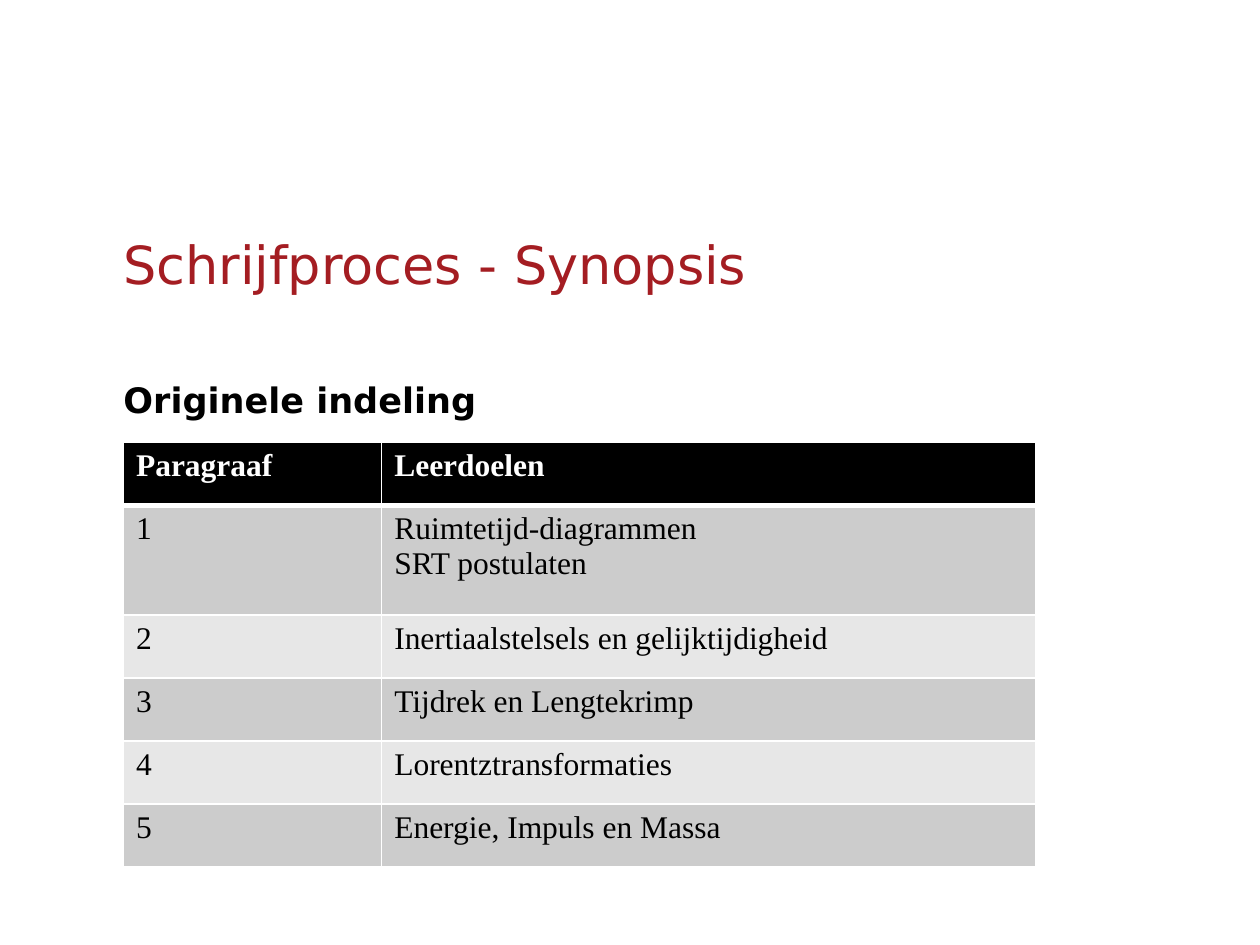
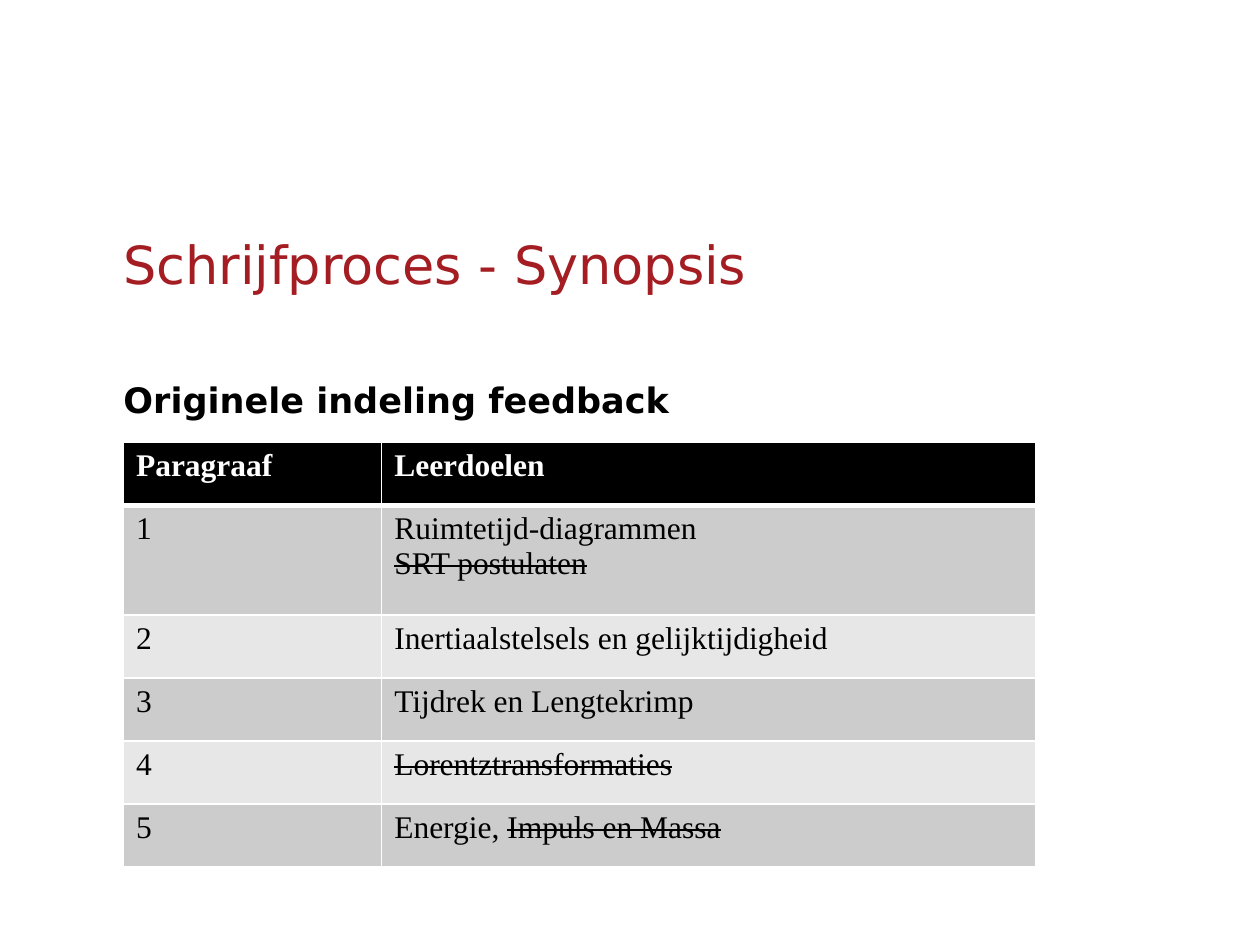
from lxml import etree
from pptx import Presentation
from pptx.dml.color import RGBColor
from pptx.enum import text
from pptx.oxml.ns import qn
from pptx.util import Inches, Pt

COLORS = {
    "title": "A41D22",
    "ink": "000000",
    "paper": "FFFFFF",
    "odd_row": "CCCCCC",
    "even_row": "E7E7E7",
}
SANS, SERIF = "DejaVu Sans", "Times New Roman"
LEFT, WIDTH = 0.98, 7.29

TITLE = "Schrijfproces - Synopsis"
HEADER = ("Paragraaf", "Leerdoelen")
COLUMN_WIDTHS = (2.05, 5.19)
ROW_HEIGHTS = (0.5, 0.87, 0.5, 0.5, 0.5, 0.5)
# Text after "~" is struck out in the feedback version
GOALS = [
    ["Ruimtetijd-diagrammen", "~SRT postulaten"],
    ["Inertiaalstelsels en gelijktijdigheid"],
    ["Tijdrek en Lengtekrimp"],
    ["~Lorentztransformaties"],
    ["Energie, ~Impuls en Massa"],
]


def style_run(r, font, size, color, bold=False):
    r.font.name = font
    r.font.size = Pt(size)
    r.font.bold = bold
    r.font.color.rgb = RGBColor.from_string(COLORS[color])


def fill_placeholder(sp, top, height, content, anchor, size, color, bold=False):
    sp.left, sp.top = Inches(LEFT), Inches(top)
    sp.width, sp.height = Inches(WIDTH), Inches(height)
    tf = sp.text_frame
    tf.text = content
    tf.word_wrap = True
    tf.auto_size = text.MSO_AUTO_SIZE.NONE
    tf.vertical_anchor = anchor
    tf.margin_left = tf.margin_right = tf.margin_top = tf.margin_bottom = 0
    p = tf.paragraphs[0]
    p.alignment = text.PP_ALIGN.LEFT
    p.space_before = Pt(0)
    style_run(p.runs[0], SANS, size, color, bold)
    return p


def add_heading(slide, heading):
    p = fill_placeholder(slide.placeholders[1], 2.95, 4.12, heading,
                         text.MSO_ANCHOR.TOP, 20, "ink", bold=True)
    p.line_spacing = 1.15
    pPr = p._p.get_or_add_pPr()
    pPr.set("marL", "0")
    pPr.set("indent", "0")
    etree.SubElement(pPr, qn("a:buNone"))


def set_borders(cell, top=1, bottom=1):
    tcPr = cell._tc.get_or_add_tcPr()
    for side, width in (("L", 1), ("R", 1), ("T", top), ("B", bottom)):
        ln = etree.SubElement(tcPr, qn("a:ln" + side), w=str(Pt(width)))
        solid = etree.SubElement(ln, qn("a:solidFill"))
        etree.SubElement(solid, qn("a:srgbClr"), val=COLORS["paper"])


def write_cell(cell, lines, strike, color, bold):
    tf = cell.text_frame
    for i, line in enumerate(lines):
        p = tf.add_paragraph() if i else tf.paragraphs[0]
        kept, _, dropped = line.partition("~")
        parts = [(kept, False), (dropped, True)] if strike else [(kept + dropped, False)]
        for words, struck in parts:
            if words:
                r = p.add_run()
                r.text = words
                style_run(r, SERIF, 18, color, bold)
                if struck:
                    r.font._element.set("strike", "sngStrike")


def add_goal_table(slide, strike):
    rows = [[[label] for label in HEADER]]
    rows += [[[str(n)], goals] for n, goals in enumerate(GOALS, 1)]
    table = slide.shapes.add_table(
        len(rows), len(HEADER), Inches(LEFT), Inches(3.51),
        Inches(sum(COLUMN_WIDTHS)), Inches(sum(ROW_HEIGHTS))).table
    for column, width in zip(table.columns, COLUMN_WIDTHS):
        column.width = Inches(width)
    for i, row in enumerate(rows):
        table.rows[i].height = Inches(ROW_HEIGHTS[i])
        is_header = i == 0
        fill = "ink" if is_header else "odd_row" if i % 2 else "even_row"
        for j, lines in enumerate(row):
            cell = table.cell(i, j)
            # The rule under the header is thicker
            set_borders(cell, top=3 if i == 1 else 1, bottom=3 if is_header else 1)
            cell.fill.solid()
            cell.fill.fore_color.rgb = RGBColor.from_string(COLORS[fill])
            write_cell(cell, lines, strike, "paper" if is_header else "ink", is_header)


def add_synopsis_slide(prs, heading, strike=False):
    slide = prs.slides.add_slide(prs.slide_layouts[1])
    fill_placeholder(slide.shapes.title, 1.57, 1.04, TITLE,
                     text.MSO_ANCHOR.MIDDLE, 30, "title")
    add_heading(slide, heading)
    add_goal_table(slide, strike)


def main():
    prs = Presentation()
    prs.slide_width, prs.slide_height = Inches(10), Inches(7.5)
    add_synopsis_slide(prs, "Originele indeling")
    add_synopsis_slide(prs, "Originele indeling feedback", strike=True)
    prs.save("out.pptx")


if __name__ == "__main__":
    main()
